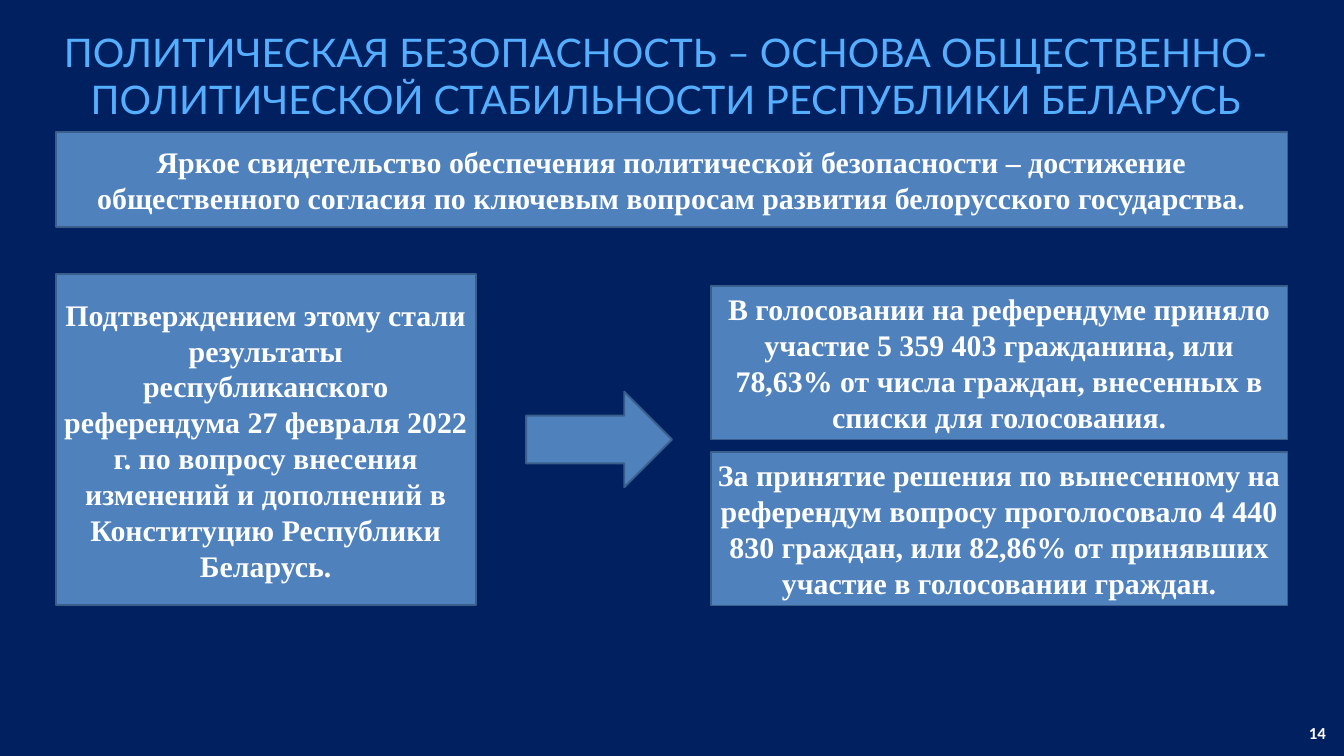
from dataclasses import dataclass

from pptx import Presentation
from pptx.dml.color import RGBColor
from pptx.enum import shapes, text
from pptx.util import Inches, Pt


@dataclass(frozen=True)
class Theme:
    background: RGBColor = RGBColor(0x00, 0x20, 0x60)
    heading: RGBColor = RGBColor(0x56, 0xAE, 0xFF)
    panel: RGBColor = RGBColor(0x4F, 0x81, 0xBD)
    outline: RGBColor = RGBColor(0x3A, 0x5F, 0x8C)
    light: RGBColor = RGBColor(0xFF, 0xFF, 0xFF)
    heading_size: float = 42.2
    heading_spacing: float = 50.6
    body_size: float = 32
    number_size: float = 18
    outline_width: float = 2


THEME = Theme()

TITLE = ("ПОЛИТИЧЕСКАЯ БЕЗОПАСНОСТЬ – ОСНОВА ОБЩЕСТВЕННО-ПОЛИТИЧЕСКОЙ "
         "СТАБИЛЬНОСТИ РЕСПУБЛИКИ БЕЛАРУСЬ")
THESIS = ("Яркое свидетельство обеспечения политической безопасности – достижение "
          "общественного согласия по ключевым вопросам развития белорусского государства.")
REFERENDUM = ("Подтверждением этому стали результаты республиканского референдума "
              "27 февраля 2022 г. по вопросу внесения изменений и дополнений "
              "в Конституцию Республики Беларусь.")
RESULTS = (
    "В голосовании на референдуме приняло участие 5 359 403 гражданина, или 78,63% "
    "от числа граждан, внесенных в списки для голосования.",
    "За принятие решения по вынесенному на референдум вопросу проголосовало 4 440 830 "
    "граждан, или 82,86% от принявших участие в голосовании граждан.",
)


def write(frame, words, font_name, size, color, bold=False,
          align=text.PP_ALIGN.CENTER, anchor=text.MSO_ANCHOR.MIDDLE):
    """Fill a text frame with one formatted paragraph and return it."""
    frame.word_wrap = True
    frame.vertical_anchor = anchor
    frame.text = words
    para = frame.paragraphs[0]
    para.alignment = align
    font = para.runs[0].font
    font.name, font.size, font.bold = font_name, Pt(size), bold
    font.color.rgb = color
    return para


def add_block(page, kind, left, top, width, height):
    """Add a preset shape in the panel colours."""
    block = page.shapes.add_shape(kind, Inches(left), Inches(top), Inches(width), Inches(height))
    block.shadow.inherit = False
    block.fill.solid()
    block.fill.fore_color.rgb = THEME.panel
    block.line.color.rgb = THEME.outline
    block.line.width = Pt(THEME.outline_width)
    return block


def add_panel(page, words, left, top, width, height):
    panel = add_block(page, shapes.MSO_SHAPE.RECTANGLE, left, top, width, height)
    write(panel.text_frame, words, "Times New Roman", THEME.body_size, THEME.light, bold=True)


def add_title(page):
    box = page.shapes.add_textbox(Inches(0), Inches(0.42), Inches(19.83), Inches(1.42))
    frame = box.text_frame
    frame.margin_left = frame.margin_right = frame.margin_top = frame.margin_bottom = 0
    para = write(frame, TITLE, "Lato", THEME.heading_size, THEME.heading,
                 anchor=text.MSO_ANCHOR.TOP)
    para.line_spacing = Pt(THEME.heading_spacing)


def add_page_number(page):
    box = page.shapes.add_textbox(Inches(17.5), Inches(10.71), Inches(2.33), Inches(0.4))
    write(box.text_frame, "14", "Calibri", THEME.number_size, THEME.light,
          bold=True, align=text.PP_ALIGN.RIGHT)


def main():
    deck = Presentation()
    deck.slide_width, deck.slide_height = Inches(20), Inches(11.25)
    page = deck.slides.add_slide(deck.slide_layouts[6])
    page.background.fill.solid()
    page.background.fill.fore_color.rgb = THEME.background

    add_page_number(page)
    add_title(page)
    add_panel(page, THESIS, 0.83, 1.96, 18.33, 1.42)
    add_panel(page, REFERENDUM, 0.83, 4.08, 6.25, 4.93)
    add_block(page, shapes.MSO_SHAPE.RIGHT_ARROW, 7.83, 5.83, 2.17, 1.42)
    result_height, result_gap = 2.29, 0.18
    for row, words in enumerate(RESULTS):
        top = 4.25 + row * (result_height + result_gap)
        add_panel(page, words, 10.58, top, 8.58, result_height)

    deck.save("out.pptx")


if __name__ == "__main__":
    main()
